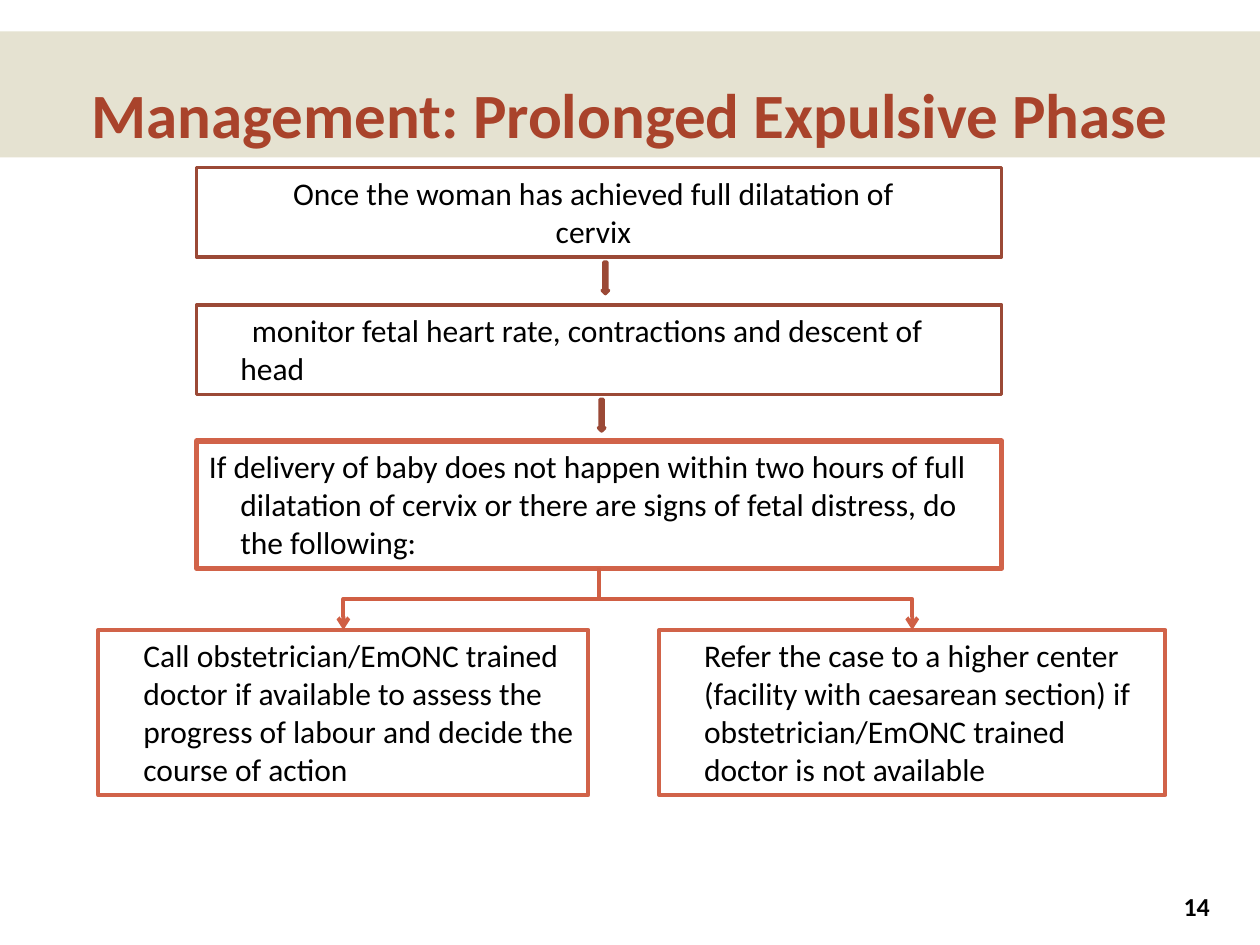
"""Build the prolonged expulsive phase management flowchart slide."""
from dataclasses import dataclass

import pptx
import pptx.dml.color
import pptx.enum.shapes
import pptx.enum.text
import pptx.oxml
import pptx.oxml.ns
import pptx.util

Inches = pptx.util.Inches
SHAPES = pptx.enum.shapes.MSO_SHAPE
ALIGN = pptx.enum.text.PP_ALIGN
ANCHOR = pptx.enum.text.MSO_ANCHOR
AUTO_SIZE = pptx.enum.text.MSO_AUTO_SIZE


@dataclass(frozen=True)
class Theme:
    """Colours, font and type sizes of the slide."""
    font: str = "Calibri"
    band: str = "DDD9C3"
    title: str = "A9432B"
    text: str = "000000"
    accent: str = "D16349"
    dark: str = "9B4936"
    connector: str = "D05F44"
    title_size: float = 36
    body_size: float = 18
    number_size: float = 14.8


THEME = Theme()


def rgb(value):
    """Return a colour object for a hex value."""
    return pptx.dml.color.RGBColor.from_string(value)


def drawing_element(tag, **attributes):
    """Return a new DrawingML element with the given attributes."""
    element = pptx.oxml.parse_xml(f"<a:{tag} {pptx.oxml.ns.nsdecls('a')}/>")
    for name, value in attributes.items():
        element.set(name, str(value))
    return element


def write_text(shape, text, size=THEME.body_size, color=THEME.text, bold=False,
               align=ALIGN.LEFT, anchor=ANCHOR.TOP, auto_size=AUTO_SIZE.NONE,
               margin=0, indent=0):
    """Write one formatted paragraph into a shape."""
    frame = shape.text_frame
    frame.word_wrap = True
    frame.auto_size = auto_size
    frame.vertical_anchor = anchor
    paragraph = frame.paragraphs[0]
    paragraph.text = text
    paragraph.alignment = align
    paragraph.space_before = pptx.util.Pt(0)
    properties = paragraph._p.get_or_add_pPr()
    properties.set("marL", str(Inches(margin)))
    properties.set("indent", str(Inches(indent)))
    font = paragraph.font
    font.name, font.size, font.bold = THEME.font, pptx.util.Pt(size), bold
    font.color.rgb = rgb(color)


def add_text(slide, text, left, top, width, height, **text_format):
    """Add a text box with formatted text."""
    shape = slide.shapes.add_textbox(*map(Inches, (left, top, width, height)))
    write_text(shape, text, **text_format)


def add_shape(slide, kind, left, top, width, height, fill=None, line=None, weight=2):
    """Add a preset shape with an optional fill and outline."""
    shape = slide.shapes.add_shape(kind, *map(Inches, (left, top, width, height)))
    shape.shadow.inherit = False
    if fill:
        shape.fill.solid()
        shape.fill.fore_color.rgb = rgb(fill)
    else:
        shape.fill.background()
    if line:
        shape.line.color.rgb = rgb(line)
        shape.line.width = pptx.util.Pt(weight)
    else:
        shape.line.fill.background()
    return shape


def add_box(slide, left, top, width, height, line, weight, text=None, **text_format):
    """Add an outlined flowchart box."""
    box = add_shape(slide, SHAPES.RECTANGLE, left, top, width, height,
                    line=line, weight=weight)
    if text:
        write_text(box, text, auto_size=AUTO_SIZE.SHAPE_TO_FIT_TEXT, **text_format)
    return box


def add_branch(slide, parent, child):
    """Join the bottom of one box to the top of another with an elbow arrow."""
    start_x, start_y = parent.left + parent.width // 2, parent.top + parent.height
    end_x, end_y = child.left + child.width // 2, child.top
    connector = slide.shapes.add_connector(
        pptx.enum.shapes.MSO_CONNECTOR.ELBOW, start_x, start_y, end_x, end_y)
    connector.begin_connect(parent, 2)
    connector.end_connect(child, 0)
    drop, run = end_y - start_y, abs(end_x - start_x)
    connector.left = (start_x + end_x - drop) // 2
    connector.top = (start_y + end_y - run) // 2
    connector.width, connector.height = drop, run
    goes_right = end_x > start_x
    properties = connector._element.spPr
    transform = properties.find(pptx.oxml.ns.qn("a:xfrm"))
    transform.set("rot", str((270 if goes_right else 90) * 60000))
    transform.set("flipH", str(int(goes_right)))
    transform.set("flipV", "0")
    connector.line.color.rgb = rgb(THEME.connector)
    connector.line.width = pptx.util.Pt(2.25)
    connector.line._get_or_add_ln().append(drawing_element("tailEnd", type="arrow"))
    properties.append(drawing_element("effectLst"))


def add_header(slide):
    """Add the translucent band behind the title, and the title."""
    band = add_shape(slide, SHAPES.RECTANGLE, 0, 0.25, 10, 1, fill=THEME.band)
    color = band._element.spPr.find(".//" + pptx.oxml.ns.qn("a:srgbClr"))
    color.append(drawing_element("alpha", val=76000))
    title = slide.shapes.title
    title._element.addprevious(band._element)
    title.left, title.top, title.width, title.height = map(Inches, (0.3, 0.25, 9.4, 1))
    write_text(title, "Management: Prolonged Expulsive Phase", size=THEME.title_size,
               color=THEME.title, bold=True, align=ALIGN.CENTER, anchor=ANCHOR.BOTTOM)


def add_flowchart(slide):
    """Add the three steps, the arrows between them and the two outcomes."""
    left, width = 1.56, 6.39
    add_box(slide, left, 1.33, width, 0.71, THEME.dark, 2)
    add_text(slide, "Once the woman has achieved full dilatation of cervix",
             2.21, 1.33, 5, 0.71, align=ALIGN.CENTER,
             auto_size=AUTO_SIZE.SHAPE_TO_FIT_TEXT)
    add_box(slide, left, 2.42, width, 0.71, THEME.dark, 2,
            "monitor fetal heart rate, contractions and descent of head",
            margin=0.25, indent=0.09)
    decision = add_box(
        slide, left, 3.5, width, 1.01, THEME.accent, 3,
        "If delivery of baby does not happen within two hours of full dilatation "
        "of cervix or there are signs of fetal distress, do the following:",
        margin=0.25, indent=-0.25)
    for arrow_left, arrow_top in ((4.78, 2.08), (4.75, 3.17)):
        add_shape(slide, SHAPES.DOWN_ARROW, arrow_left, arrow_top, 0.05, 0.25,
                  fill=THEME.accent, line=THEME.dark)
    outcomes = (
        (0.78, 3.89, "Call obstetrician/EmONC trained doctor if available to assess "
                     "the progress of labour and decide the course of action"),
        (5.23, 4.02, "Refer the case to a higher center (facility with caesarean "
                     "section) if obstetrician/EmONC trained doctor is not available"),
    )
    for outcome_left, outcome_width, text in outcomes:
        outcome = add_box(slide, outcome_left, 5, outcome_width, 1.31,
                          THEME.accent, 2.25, text, margin=0.26)
        add_branch(slide, decision, outcome)


def main():
    """Build and save the presentation."""
    presentation = pptx.Presentation()
    presentation.slide_width, presentation.slide_height = Inches(10), Inches(7.5)
    slide = presentation.slides.add_slide(presentation.slide_layouts[5])
    add_header(slide)
    add_flowchart(slide)
    add_text(slide, "14", 8.74, 7.03, 0.96, 0.32, size=THEME.number_size, bold=True,
             align=ALIGN.RIGHT, anchor=ANCHOR.MIDDLE)
    presentation.save("out.pptx")


if __name__ == "__main__":
    main()
